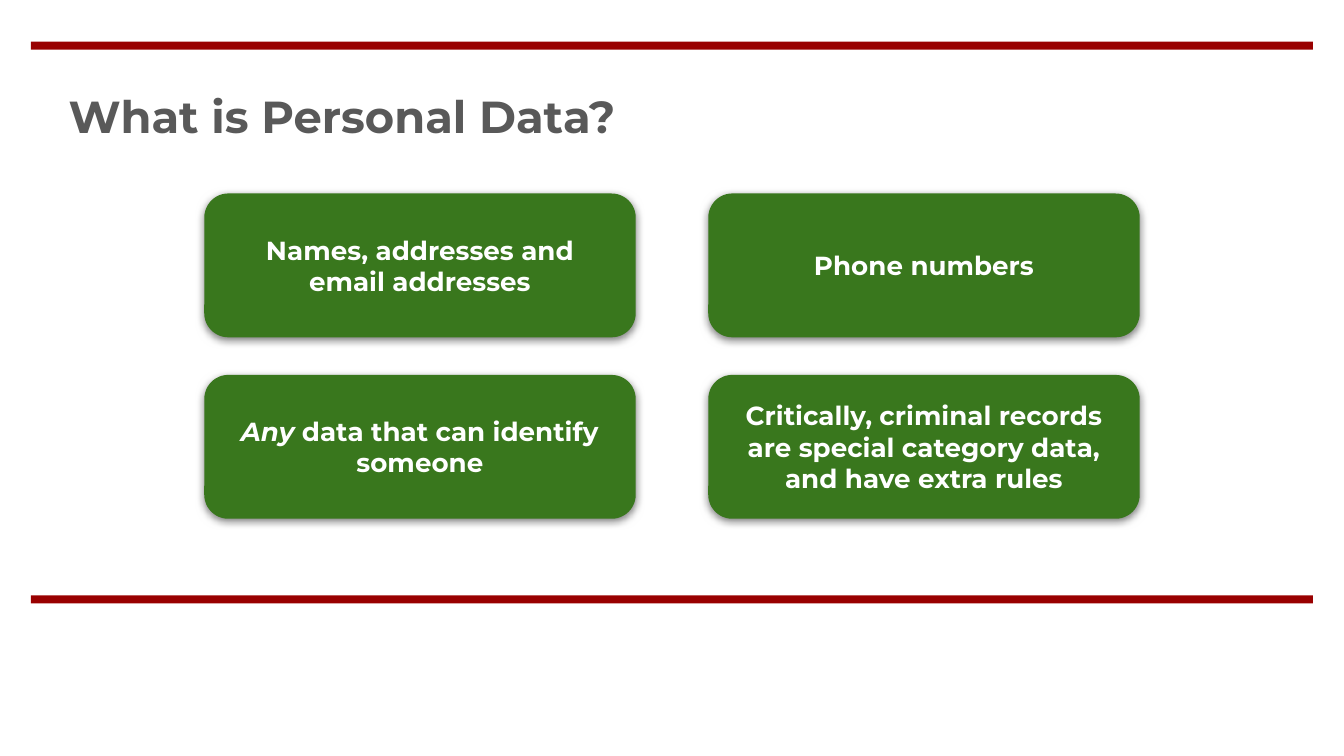
import pptx
import pptx.util
import pptx.dml.color
import pptx.enum.shapes
import pptx.enum.text
import pptx.oxml
import pptx.oxml.ns

Inches, Pt = pptx.util.Inches, pptx.util.Pt
Align, Anchor = pptx.enum.text.PP_ALIGN, pptx.enum.text.MSO_ANCHOR
Kind = pptx.enum.shapes.MSO_SHAPE

WIDE = 10
HIGH = WIDE * 9 / 16
FONT = "Montserrat"
HUES = {"rule": "990000", "title": "595959", "card": "39771D",
        "text": "FFFFFF", "shade": "000000"}
CARDS = [
    [[("Names, addresses and email addresses", False)],
     [("Phone numbers", False)]],
    [[("Any", True), (" data that can identify someone", False)],
     [("Critically, criminal records are special category data, "
       "and have extra rules", False)]],
]


def hue(name):
    """Return the named colour."""
    return pptx.dml.color.RGBColor.from_string(HUES[name])


def style(run, size, name, slant=False):
    """Format a run in the bold slide font."""
    font = run.font
    font.name, font.size, font.bold = FONT, Pt(size), True
    font.italic = slant
    font.color.rgb = hue(name)


def pad(frame):
    """Give a text frame equal margins and wrapping."""
    frame.word_wrap = True
    frame.margin_left = frame.margin_right = Inches(0.1)
    frame.margin_top = frame.margin_bottom = Inches(0.1)


def block(slide, kind, box, name):
    """Add a flat filled shape without outline."""
    shape = slide.shapes.add_shape(kind, *map(Inches, box))
    shape.shadow.inherit = False
    shape.fill.solid()
    shape.fill.fore_color.rgb = hue(name)
    shape.line.fill.background()
    return shape


def shade(shape):
    """Put a soft shadow below a shape."""
    props = shape._element.spPr
    props.remove(props.find(pptx.oxml.ns.qn("a:effectLst")))
    props.append(pptx.oxml.parse_xml(
        f'<a:effectLst {pptx.oxml.ns.nsdecls("a")}>'
        f'<a:outerShdw blurRad="{Pt(4.5)}" dist="{Pt(1.5)}" dir="5400000" '
        'algn="bl" rotWithShape="0">'
        f'<a:srgbClr val="{HUES["shade"]}"><a:alpha val="50000"/></a:srgbClr>'
        '</a:outerShdw></a:effectLst>'))


def rules(slide, box):
    """Draw bars along the top and bottom of the box."""
    left, top, wide, high = box
    thick = 0.06
    for y in (top, top + high - thick):
        block(slide, Kind.RECTANGLE, (left, y, wide, thick), "rule")


def title(slide, box, text):
    """Place and format the title."""
    shape = slide.shapes.title
    shape.left, shape.top, shape.width, shape.height = map(Inches, box)
    frame = shape.text_frame
    frame.text = text
    pad(frame)
    frame.auto_size = pptx.enum.text.MSO_AUTO_SIZE.SHAPE_TO_FIT_TEXT
    frame.vertical_anchor = Anchor.TOP
    para = frame.paragraphs[0]
    para.alignment = Align.LEFT
    style(para.runs[0], 24, "title")


def card(slide, box, parts):
    """Draw one rounded card with centred text."""
    shape = block(slide, Kind.ROUNDED_RECTANGLE, box, "card")
    shape.adjustments[0] = 0.167
    shade(shape)
    frame = shape.text_frame
    pad(frame)
    frame.vertical_anchor = Anchor.MIDDLE
    para = frame.paragraphs[0]
    para.alignment = Align.CENTER
    for text, slant in parts:
        run = para.add_run()
        run.text = text
        style(run, 14, "text", slant)


def grid(slide, box, rows, gaps):
    """Fill the box with equal cards, parted by the given gaps."""
    left, top, wide, high = box
    across, down = gaps
    cols = len(rows[0])
    w = (wide - across * (cols - 1)) / cols
    h = (high - down * (len(rows) - 1)) / len(rows)
    for r, row in enumerate(rows):
        for c, parts in enumerate(row):
            spot = (left + c * (w + across), top + r * (h + down), w, h)
            card(slide, spot, parts)


def main():
    """Build and save the slide."""
    deck = pptx.Presentation()
    deck.slide_width, deck.slide_height = Inches(WIDE), Inches(HIGH)
    slide = deck.slides.add_slide(deck.slide_layouts[5])
    rules(slide, (0.23, 0.31, WIDE - 2 * 0.23, 4.18))
    title(slide, (0.41, 0.56, 0.85 * WIDE, 0.61), "What is Personal Data?")
    grid(slide, (1.52, 1.44, WIDE - 2 * 1.52, 2.42), CARDS, (0.54, 0.28))
    deck.save("out.pptx")


if __name__ == "__main__":
    main()
